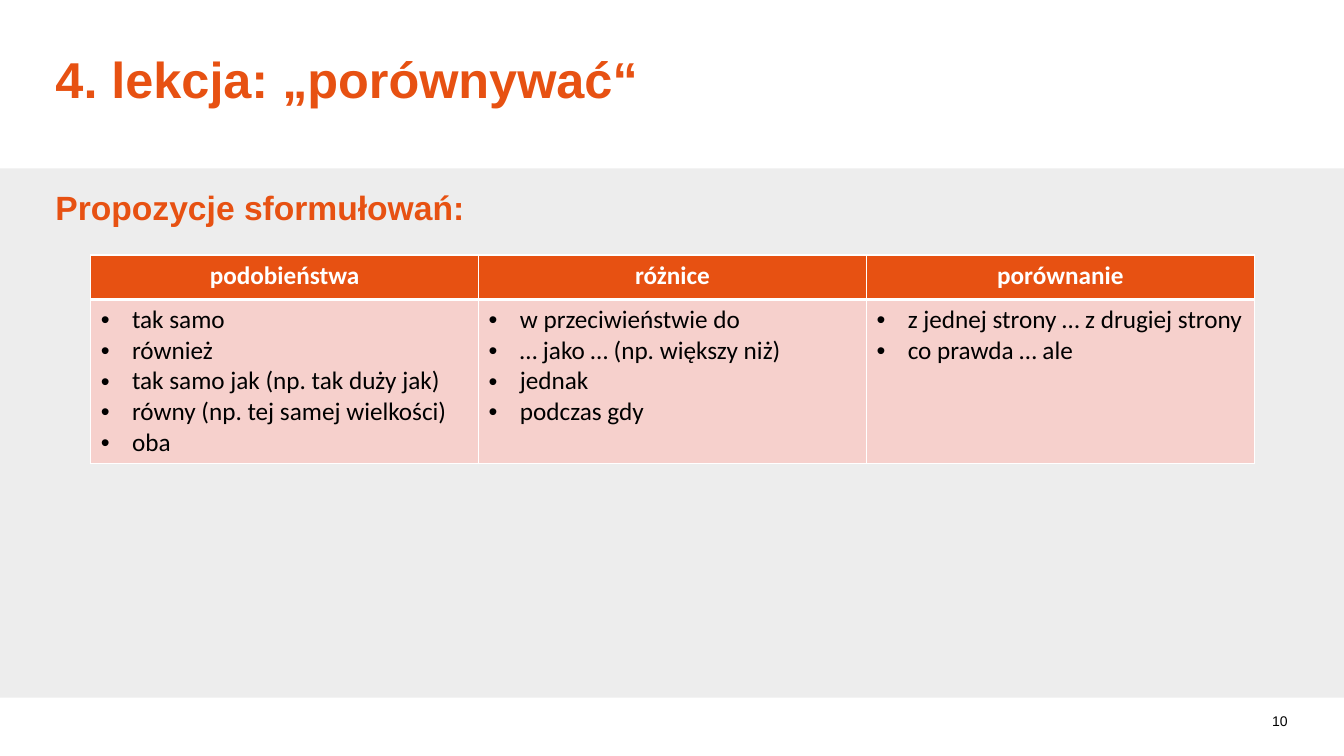
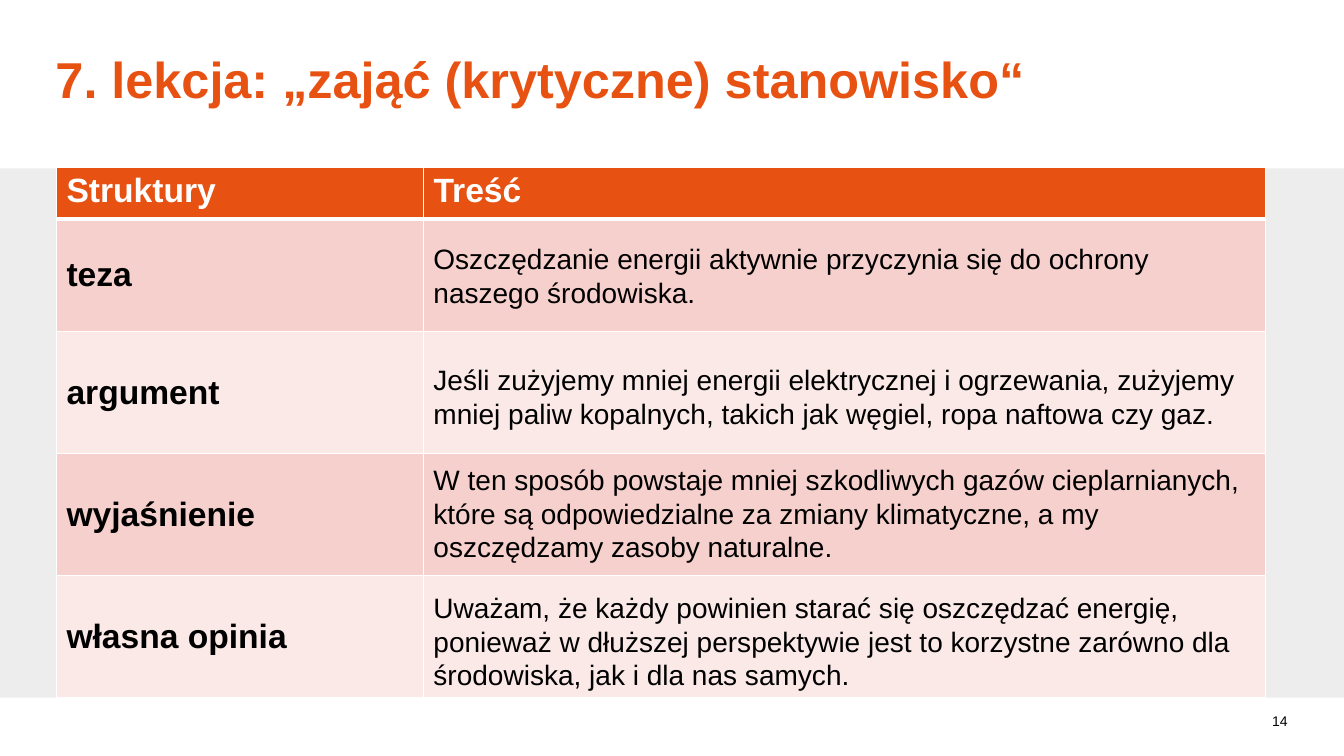
from pptx import Presentation
from pptx.dml.color import RGBColor
from pptx.enum.shapes import MSO_SHAPE
from pptx.enum.text import MSO_ANCHOR, MSO_AUTO_SIZE, PP_ALIGN
from pptx.oxml import parse_xml
from pptx.oxml.ns import nsdecls
from pptx.util import Inches, Pt

RECT = MSO_SHAPE.RECTANGLE
TOP, MIDDLE = MSO_ANCHOR.TOP, MSO_ANCHOR.MIDDLE
LEFT, CENTER, RIGHT = PP_ALIGN.LEFT, PP_ALIGN.CENTER, PP_ALIGN.RIGHT
NO_FIT = MSO_AUTO_SIZE.NONE

COLORS = {
    "accent": "E75112",
    "band": "EDEDED",
    "row_dark": "F6D0CC",
    "row_light": "FAE9E7",
    "white": "FFFFFF",
    "black": "000000",
}
FORMATS = {
    "title": {"name": "Arial", "size": Pt(36), "bold": True, "color": "accent"},
    "subtitle": {"name": "Arial", "size": Pt(24), "bold": True, "color": "accent"},
    "number": {"name": "Arial", "size": Pt(10), "bold": False, "color": "black"},
    "text": {"name": "Arial", "size": Pt(20), "bold": False, "color": "black"},
    "head": {"name": "Arial", "size": Pt(24), "bold": True, "color": "white"},
    "label": {"name": "Arial", "size": Pt(24), "bold": True, "color": "black"},
    "phrase_head": {"name": "Calibri", "size": Pt(18), "bold": True, "color": "white"},
    "phrase": {"name": "Calibri", "size": Pt(18), "bold": False, "color": "black"},
}
LAYOUT_CONTENT, LAYOUT_TITLE = 1, 5
BULLET_INDENT = Inches(0.31)
MARGIN = 4.13


def rgb(name):
    return RGBColor.from_string(COLORS[name])


class Deck:
    """Style and current slide; lengths are percentages of the slide's size."""

    def __init__(self):
        self.prs = Presentation()
        self.prs.slide_width, self.prs.slide_height = Inches(13.33), Inches(7.5)
        self.slide = None

    def x(self, share):
        return round(self.prs.slide_width * share / 100)

    def y(self, share):
        return round(self.prs.slide_height * share / 100)

    def box(self, left, top, width, height):
        return self.x(left), self.y(top), self.x(width), self.y(height)

    def new_slide(self, layout, title, title_width, number):
        self.slide = self.prs.slides.add_slide(self.prs.slide_layouts[layout])
        if len(self.prs.slides) == 1:
            self.master_band()
        self.placeholder(0, title, "title", (MARGIN, 6.4, title_width, 14.27))
        self.text(number, "number", (89.05, 92.67, 6.75, 5.33), RIGHT, MIDDLE, 0)

    def master_band(self):
        """Draw the grey band once, at the back of the slide master."""
        sp = self.slide.shapes.add_shape(RECT, *self.box(0, 22.27, 100, 70))
        sp.shadow.inherit = False
        sp.fill.solid()
        sp.fill.fore_color.rgb = rgb("band")
        sp.line.fill.background()
        sp.element.xpath(".//p:cNvPr")[0].set("id", "100")
        self.prs.slide_master.shapes.element.insert(2, sp.element)

    def add_text(self, p, text, fmt, align=LEFT):
        r = p.add_run()
        r.text = text
        p.alignment = align
        for key, value in FORMATS[fmt].items():
            if key == "color":
                r.font.color.rgb = rgb(value)
            else:
                setattr(r.font, key, value)

    def frame(self, tf, anchor, margin):
        values = {"word_wrap": True, "auto_size": NO_FIT, "vertical_anchor": anchor}
        if margin is not None:
            sides = ("left", "top", "right", "bottom")
            values.update({f"margin_{side}": margin for side in sides})
        for key, value in values.items():
            setattr(tf, key, value)

    def placeholder(self, idx, text, fmt, at):
        sp = self.slide.placeholders[idx]
        sp.left, sp.top, sp.width, sp.height = self.box(*at)
        self.frame(sp.text_frame, TOP, 0)
        p = sp.text_frame.paragraphs[0]
        self.bullet(p, None)
        self.add_text(p, text, fmt)
        p.space_before = Pt(0)

    def text(self, text, fmt, at, align=LEFT, anchor=TOP, margin=None):
        tf = self.slide.shapes.add_textbox(*self.box(*at)).text_frame
        self.frame(tf, anchor, margin)
        self.add_text(tf.paragraphs[0], text, fmt, align)

    def bullet(self, p, char):
        """Set a bullet with a hanging indent, or no bullet if char is None."""
        pPr = p._p.get_or_add_pPr()
        indent = BULLET_INDENT if char else 0
        pPr.set("marL", str(indent))
        pPr.set("indent", str(-indent))
        tag = f'<a:buChar {nsdecls("a")} char="{char}"/>' if char else f'<a:buNone {nsdecls("a")}/>'
        if char:
            pPr.append(parse_xml(f'<a:buFont {nsdecls("a")} typeface="Arial"/>'))
        pPr.append(parse_xml(tag))

    def borders(self, cell, row):
        """White rules, thick between the header and the first row."""
        tcPr = cell._tc.get_or_add_tcPr()
        thick = {(0, "B"), (1, "T")}
        for side in "LRTB":
            width = Pt(3 if (row, side) in thick else 1)
            tcPr.append(parse_xml(
                f'<a:ln{side} {nsdecls("a")} w="{width}"><a:solidFill>'
                f'<a:srgbClr val="{COLORS["white"]}"/></a:solidFill></a:ln{side}>'))

    def table(self, left, top, cols, rows, cells, head, body, head_align=LEFT, anchor=TOP):
        """A cell is a string, or a list of strings for bullets."""
        at = self.box(left, top, sum(cols), sum(rows))
        table = self.slide.shapes.add_table(len(rows), len(cols), *at).table
        table.horz_banding = False
        for col, width in zip(table.columns, cols):
            col.width = self.x(width)
        for i, (row, height) in enumerate(zip(table.rows, rows)):
            row.height = self.y(height)
            fill = ("row_light", "row_dark")[i % 2] if i else "accent"
            for cell, content in zip(row.cells, cells[i]):
                self.borders(cell, i)
                cell.fill.solid()
                cell.fill.fore_color.rgb = rgb(fill)
                cell.vertical_anchor = anchor if i else TOP
                bulleted = isinstance(content, list)
                for k, line in enumerate(content if bulleted else [content]):
                    tf = cell.text_frame
                    p = tf.add_paragraph() if k else tf.paragraphs[0]
                    if bulleted:
                        self.bullet(p, "•")
                    if line:
                        self.add_text(p, line, body if i else head, LEFT if i else head_align)


def comparing(deck):
    deck.new_slide(LAYOUT_CONTENT, "4. lekcja: „porównywać“", 58.74, "10")
    deck.placeholder(1, "Propozycje sformułowań:", "subtitle", (MARGIN, 24.67, 93.32, 53.2))
    phrases = [
        ["podobieństwa", "różnice", "porównanie"],
        [
            ["tak samo", "również", "tak samo jak (np. tak duży jak)",
             "równy (np. tej samej wielkości)", "oba"],
            ["w przeciwieństwie do", "… jako … (np. większy niż)", "jednak", "podczas gdy"],
            ["z jednej strony … z drugiej strony", "co prawda … ale"],
        ],
    ]
    deck.table(6.75, 33.73, [28.86] * 3, [5.87, 21.33], phrases,
               "phrase_head", "phrase", CENTER)


def taking_a_stand(deck):
    deck.new_slide(LAYOUT_TITLE, "7. lekcja: „zająć (krytyczne) stanowisko“", 88.75, "14")
    labels = ["teza", "argument", "wyjaśnienie", "własna opinia"]
    cols = [27.31, 62.64]
    left = 4.2
    deck.table(left, 22.13, cols, [6.8, 14.93] + [16.13] * 3,
               [["Struktury", "Treść"]] + [[label, ""] for label in labels],
               "head", "label", anchor=MIDDLE)
    two_lines, three_lines = 10.27, 14.8
    statements = [
        (31.33, two_lines, "Oszczędzanie energii aktywnie przyczynia się do ochrony "
                           "naszego środowiska."),
        (47.33, two_lines, "Jeśli zużyjemy mniej energii elektrycznej i ogrzewania, zużyjemy "
                           "mniej paliw kopalnych, takich jak węgiel, ropa naftowa czy gaz."),
        (60.53, three_lines, "W ten sposób powstaje mniej szkodliwych gazów cieplarnianych, "
                             "które są odpowiedzialne za zmiany klimatyczne, a my "
                             "oszczędzamy zasoby naturalne."),
        (77.47, three_lines, "Uważam, że każdy powinien starać się oszczędzać energię, "
                             "ponieważ w dłuższej perspektywie jest to korzystne zarówno dla "
                             "środowiska, jak i dla nas samych."),
    ]
    for top, height, statement in statements:
        deck.text(statement, "text", (left + cols[0], top, cols[1], height))


def main():
    deck = Deck()
    comparing(deck)
    taking_a_stand(deck)
    deck.prs.save("out.pptx")


if __name__ == "__main__":
    main()
